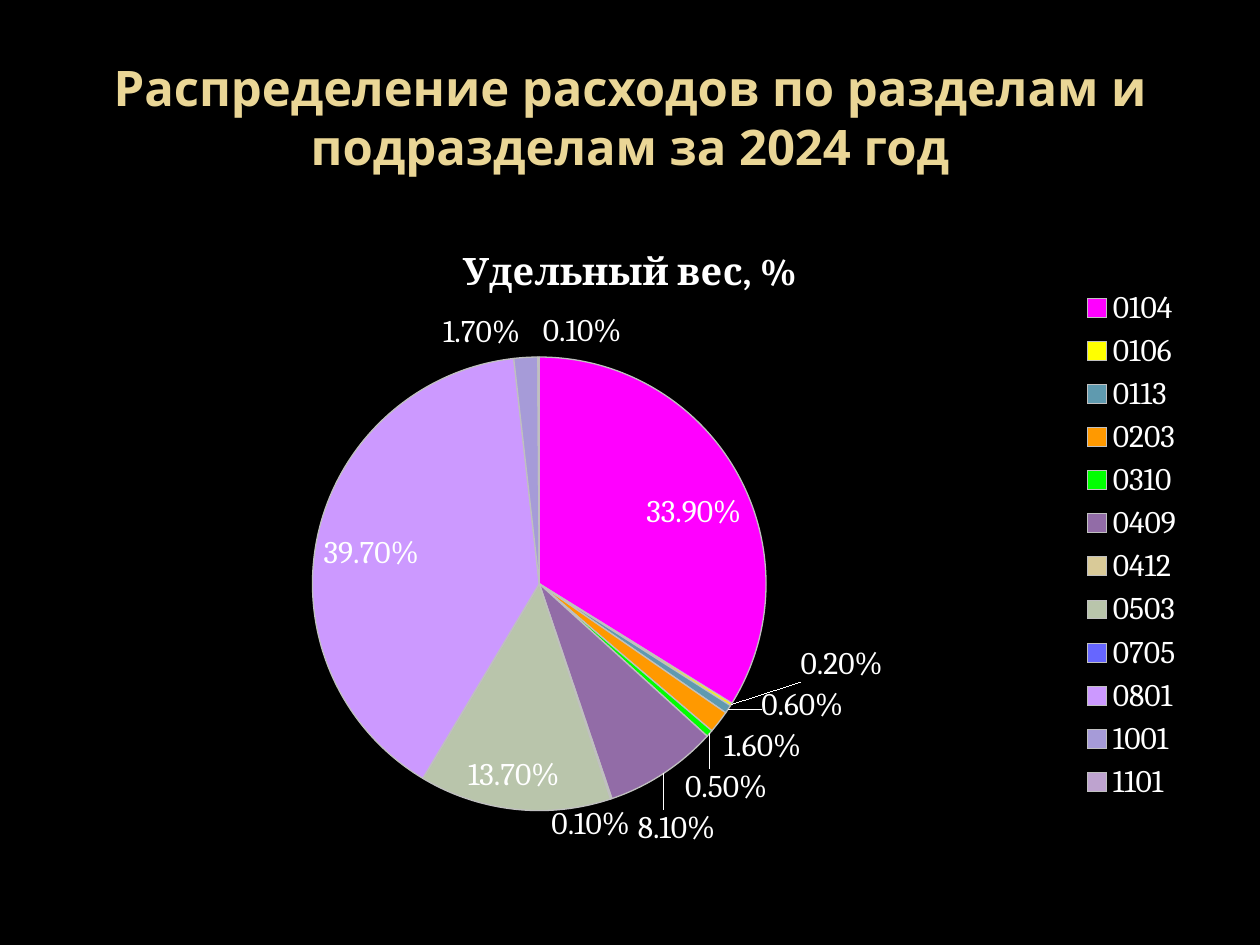
from lxml import etree
from pptx import Presentation
from pptx.chart.data import CategoryChartData
from pptx.dml.color import RGBColor
from pptx.enum.chart import XL_CHART_TYPE, XL_LABEL_POSITION, XL_LEGEND_POSITION
from pptx.enum.text import MSO_ANCHOR, PP_ALIGN
from pptx.oxml import parse_xml
from pptx.oxml.ns import nsdecls, qn
from pptx.util import Pt

PIE = XL_CHART_TYPE.PIE
BEST_FIT = XL_LABEL_POSITION.BEST_FIT
RIGHT = XL_LEGEND_POSITION.RIGHT
MIDDLE = MSO_ANCHOR.MIDDLE
CENTER = PP_ALIGN.CENTER


def rgb(value):
    return RGBColor.from_string(value)


def style(font, name, size, color, bold=False):
    font.name = name
    font.size = Pt(size)
    font.color.rgb = rgb(color)
    font.bold = bold


SECTIONS = [
    ("0104", 0.339, "FF00FF"),
    ("0106", 0.002, "FFFF00"),
    ("0113", 0.006, "5F9AAF"),
    ("0203", 0.016, "FF9900"),
    ("0310", 0.005, "00FF00"),
    ("0409", 0.081, "926CA7"),
    ("0412", 0.001, "D9CA98"),
    ("0503", 0.137, "B9C5AB"),
    ("0705", 0, "6666FF"),
    ("0801", 0.397, "CC99FF"),
    ("1001", 0.017, "A69BD8"),
    ("1101", 0.001, "BEA3CF"),
]

prs = Presentation()
prs.slide_width = Pt(720)
prs.slide_height = Pt(540)
s = prs.slides.add_slide(prs.slide_layouts[6])
s.background.fill.solid()
s.background.fill.fore_color.rgb = rgb("000000")

title = s.shapes.add_textbox(Pt(36), Pt(21.6), Pt(648), Pt(90))
tf = title.text_frame
tf.word_wrap = True
tf.vertical_anchor = MIDDLE
p = tf.paragraphs[0]
p.text = "Распределение расходов по разделам и подразделам за 2024 год"
p.alignment = CENTER
style(p.runs[0].font, "Open Sans", 28, "EAD696", True)

data = CategoryChartData(number_format="0.00%")
data.categories = [code for code, share, color in SECTIONS]
data.add_series("Удельный вес, %", [share for code, share, color in SECTIONS])
chart = s.shapes.add_chart(PIE, Pt(36), Pt(126), Pt(648), Pt(370.8), data).chart
style(chart.font, "Cambria", 18, "FFFFFF")

chart.has_title = True
p = chart.chart_title.text_frame.paragraphs[0]
p.text = "Удельный вес, %"
style(p.runs[0].font, "Cambria", 21.6, "FFFFFF", True)

chart.has_legend = True
chart.legend.position = RIGHT
chart.legend.include_in_layout = False
style(chart.legend.font, "Cambria", 18, "FFFFFF")

plot = chart.plots[0]
plot.vary_by_categories = True
series = plot.series[0]
for i, (code, share, color) in enumerate(SECTIONS):
    slice_format = series.points[i].format
    slice_format.fill.solid()
    slice_format.fill.fore_color.rgb = rgb(color)
    slice_format.line.color.rgb = rgb("C0C0C0")
    slice_format.line.width = Pt(0.75)

labels = series.data_labels
labels.show_value = True
labels.number_format = "0.00%"
labels.number_format_is_linked = False
labels.position = BEST_FIT
style(labels.font, "Cambria", 18, "FFFFFF")
dLbls = series._element.find(qn("c:dLbls"))
leader = dLbls.find(qn("c:showLeaderLines"))
if leader is None:
    leader = etree.SubElement(dLbls, qn("c:showLeaderLines"))
leader.set("val", "1")
for i, (code, share, color) in enumerate(SECTIONS):
    if share == 0:
        dLbls.insert(0, parse_xml(
            f'<c:dLbl {nsdecls("c")}><c:idx val="{i}"/><c:delete val="1"/></c:dLbl>'))

plot_area = chart._chartSpace.chart.plotArea
for layout in plot_area.findall(qn("c:layout")):
    plot_area.remove(layout)
layout = etree.Element(qn("c:layout"))
manual = etree.SubElement(layout, qn("c:manualLayout"))
for tag, value in [("layoutTarget", "inner"), ("xMode", "edge"), ("yMode", "edge"),
                   ("x", "0.22"), ("y", "0.21"), ("w", "0.4"), ("h", "0.7")]:
    etree.SubElement(manual, qn(f"c:{tag}")).set("val", value)
plot_area.insert(0, layout)

prs.save("out.pptx")
